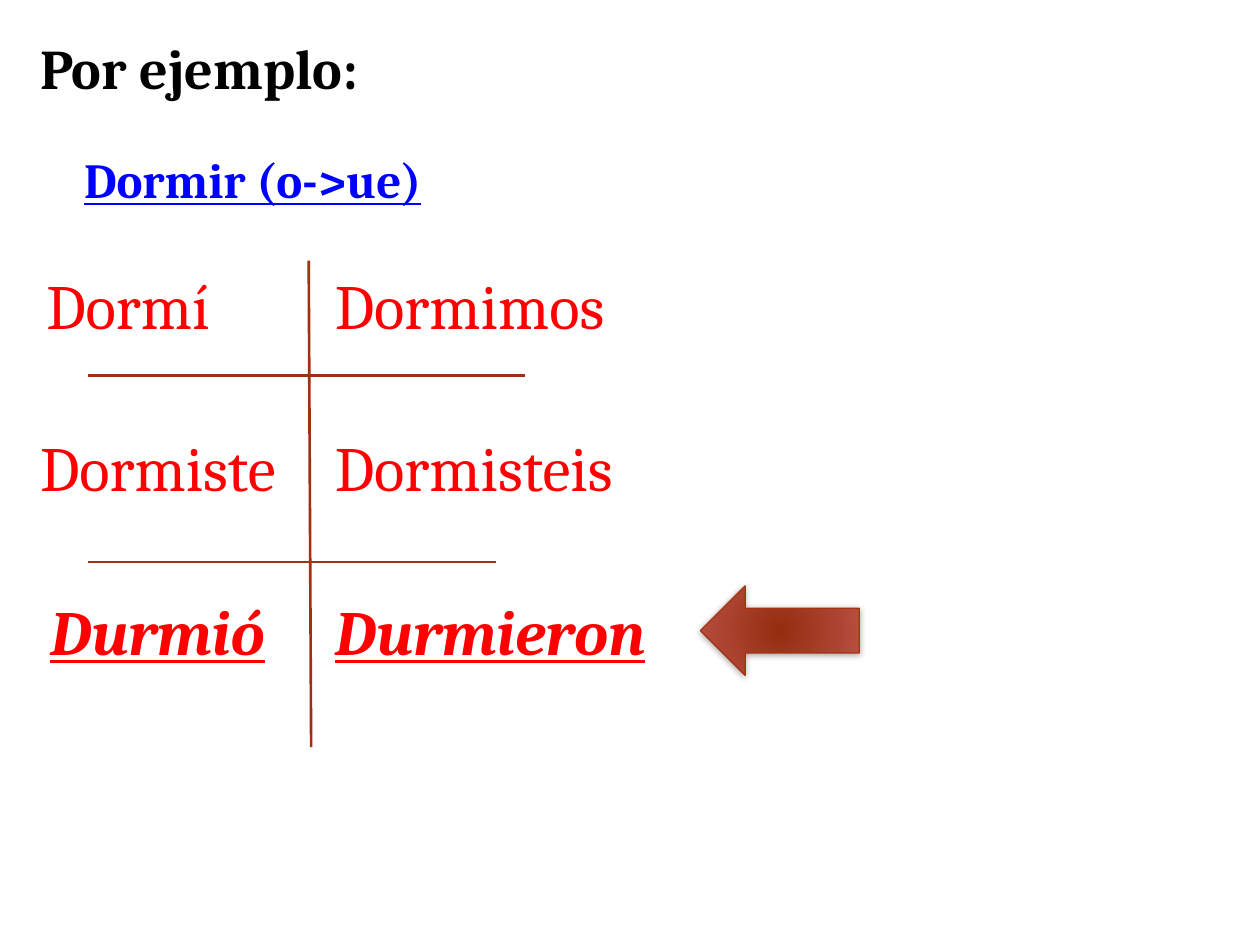
from lxml.etree import SubElement
from pptx import Presentation
from pptx.dml.color import RGBColor
from pptx.enum.shapes import MSO_CONNECTOR as Connector, MSO_SHAPE as Shape
from pptx.enum.text import MSO_AUTO_SIZE as AutoSize
from pptx.oxml.ns import qn
from pptx.util import Pt

FONT = "Cambria"
BLACK, BLUE, RED = "000000", "0000FF", "FF0000"
LINE_COLOR = "9F3011"

ROW_TOPS = (149, 241.2, 334.8)
ROW_HEIGHT = 51.1
PLURAL_LEFT = 184.3
# Each row: singular form, its left and width, plural form, its width, stem change
CONJUGATION = (
    ("Dormí", 19.4, 122.4, "Dormimos", 199.4, False),
    ("Dormiste", 15.8, 162, "Dormisteis", 244.8, False),
    ("Durmió", 21.6, 144.7, "Durmieron", 224.6, True),
)


def color(hex_code):
    return RGBColor.from_string(hex_code)


def add_text(page, text, left, top, width, height, size, hex_code,
             bold=False, italic=False, underline=False):
    box = page.shapes.add_textbox(Pt(left), Pt(top), Pt(width), Pt(height))
    frame = box.text_frame
    frame.word_wrap = True
    frame.auto_size = AutoSize.SHAPE_TO_FIT_TEXT
    span = frame.paragraphs[0].add_run()
    span.text = text
    font = span.font
    font.name, font.size = FONT, Pt(size)
    font.bold, font.italic, font.underline = bold, italic, underline
    font.color.rgb = color(hex_code)


def add_line(page, x1, y1, x2, y2):
    line = page.shapes.add_connector(Connector.STRAIGHT, Pt(x1), Pt(y1), Pt(x2), Pt(y2))
    line.line.color.rgb = color(LINE_COLOR)
    line.line.width = Pt(1.5)
    SubElement(line._element.spPr, qn("a:effectLst"))


def set_radial_fill(shape, inner, outer):
    shape.fill.gradient()
    for stop, hex_code, position in zip(shape.fill.gradient_stops, (inner, outer), (0, 1)):
        stop.color.rgb = color(hex_code)
        stop.position = position
    gradient = shape._element.spPr.find(qn("a:gradFill"))
    gradient.remove(gradient.find(qn("a:lin")))
    radial = SubElement(gradient, qn("a:path"), path="circle")
    SubElement(radial, qn("a:fillToRect"), l="40000", t="100000", r="40000", b="100000")


def set_shadow(shape, hex_code, opacity, blur, distance):
    """Cast a soft shadow straight down."""
    shape.shadow.inherit = False
    effects = shape._element.spPr.find(qn("a:effectLst"))
    shadow = SubElement(effects, qn("a:outerShdw"), blurRad=str(Pt(blur)),
                        dist=str(Pt(distance)), dir="5400000", rotWithShape="0")
    tint = SubElement(shadow, qn("a:srgbClr"), val=hex_code)
    SubElement(tint, qn("a:alpha"), val=str(opacity * 1000))


def add_arrow(page, left, top, width, height):
    arrow = page.shapes.add_shape(Shape.LEFT_ARROW, Pt(left), Pt(top), Pt(width), Pt(height))
    set_radial_fill(arrow, "952D10", "BA5145")
    arrow.line.color.rgb = color("A63212")
    arrow.line.width = Pt(0.75)
    set_shadow(arrow, BLACK, 37, 4, 1)


def add_conjugation(page):
    for top, row in zip(ROW_TOPS, CONJUGATION):
        singular, left, singular_width, plural, plural_width, changed = row
        for text, x, width in ((singular, left, singular_width),
                               (plural, PLURAL_LEFT, plural_width)):
            add_text(page, text, x, top, width, ROW_HEIGHT, 36, RED,
                     changed, changed, changed)


def main():
    deck = Presentation()
    deck.slide_width, deck.slide_height = Pt(720), Pt(540)
    page = deck.slides.add_slide(deck.slide_layouts[6])
    add_text(page, "Por ejemplo:", 15.8, 15.8, 546.5, 46.1, 32, BLACK, bold=True)
    add_text(page, "Dormir (o->ue)", 41, 82.1, 242.6, 41, 28, BLUE,
             bold=True, underline=True)
    add_line(page, 176.4, 149, 177.8, 427)
    add_line(page, 300.2, 214.6, 50.4, 214.6)
    add_line(page, 283.7, 321.1, 50.4, 321.1)
    add_arrow(page, 400.3, ROW_TOPS[-1], 90.7, ROW_HEIGHT)
    add_conjugation(page)
    deck.save("out.pptx")


if __name__ == "__main__":
    main()
